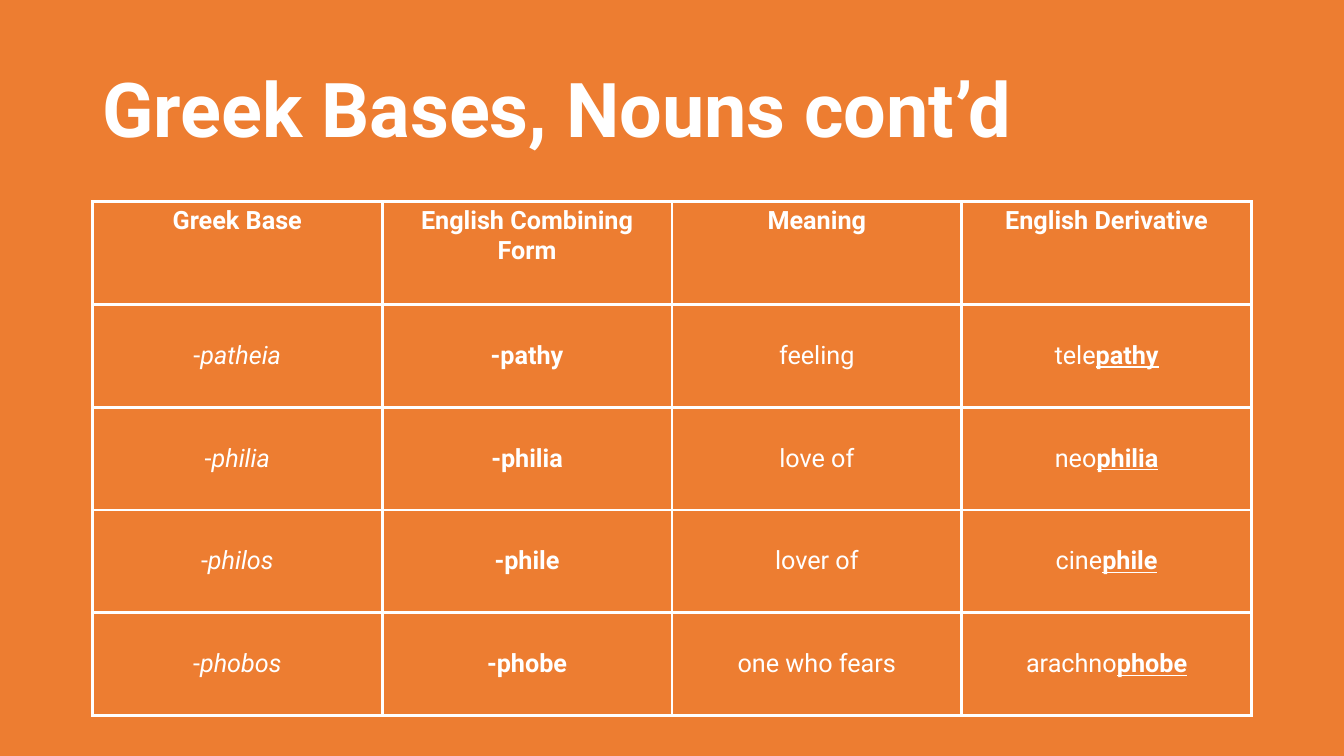
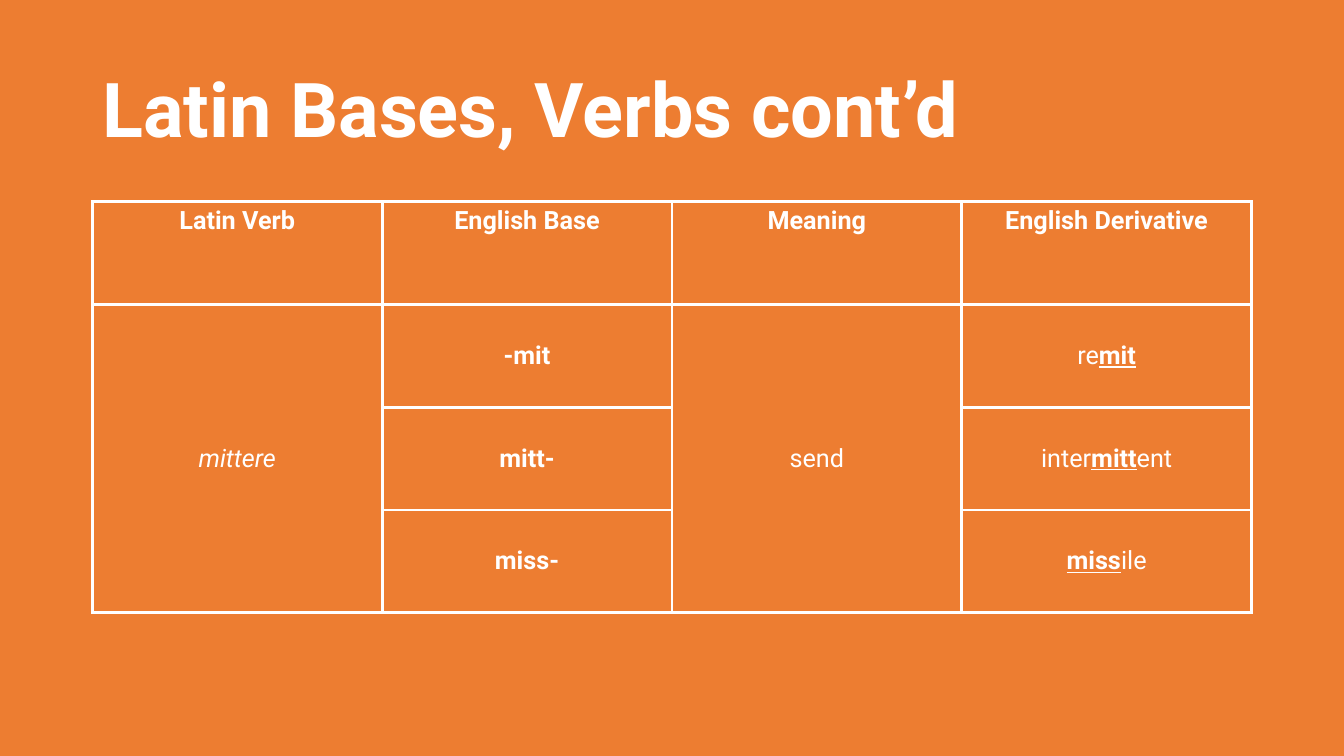
import pptx
import pptx.dml.color
import pptx.enum.text
import pptx.oxml
import pptx.oxml.ns
import pptx.util

Pt = pptx.util.Pt
ANCHOR = pptx.enum.text.MSO_ANCHOR
ALIGN = pptx.enum.text.PP_ALIGN

COLORS = {"background": "ED7D31", "text": "FFFFFF", "border": "FFFFFF"}


class Deck:
    font = "Roboto"
    title_size = 54
    cell_size = 18
    border_width = 2.25
    left = 66
    width = 828
    title_top = 28.8
    title_height = 104.4
    table_top = 144
    row_height = 73.44

    def __init__(self):
        self.prs = pptx.Presentation()
        self.prs.slide_width = Pt(960)
        self.prs.slide_height = Pt(540)
        self.s = None

    def color(self, name):
        return pptx.dml.color.RGBColor.from_string(COLORS[name])

    def slide(self):
        self.s = self.prs.slides.add_slide(self.prs.slide_layouts[6])
        fill = self.s.background.fill
        fill.solid()
        fill.fore_color.rgb = self.color("background")

    def run(self, p, text, size, style=""):
        r = p.add_run()
        r.text = text
        r.font.name = self.font
        r.font.size = Pt(size)
        r.font.color.rgb = self.color("text")
        r.font.bold = "b" in style
        r.font.italic = "i" in style
        r.font.underline = "u" in style

    def title(self, text):
        sp = self.s.shapes.add_textbox(
            Pt(self.left), Pt(self.title_top), Pt(self.width), Pt(self.title_height))
        tf = sp.text_frame
        tf.word_wrap = True
        tf.vertical_anchor = ANCHOR.MIDDLE
        p = tf.paragraphs[0]
        p.line_spacing = 0.9
        self.run(p, text, self.title_size, "b")

    def borders(self, cell):
        tc_pr = cell._tc.get_or_add_tcPr()
        for i, side in enumerate(("lnL", "lnR", "lnT", "lnB")):
            tc_pr.insert(i, pptx.oxml.parse_xml(
                f'<a:{side} {pptx.oxml.ns.nsdecls("a")} w="{Pt(self.border_width)}">'
                f'<a:solidFill><a:srgbClr val="{COLORS["border"]}"/></a:solidFill>'
                f'</a:{side}>'))

    def cell(self, cell, runs, anchor):
        cell.fill.background()
        self.borders(cell)
        cell.vertical_anchor = anchor
        p = cell.text_frame.paragraphs[0]
        p.alignment = ALIGN.CENTER
        for text, style in runs or []:
            self.run(p, text, self.cell_size, style)

    def table(self, headers, body):
        rows = [[[(h, "b")] for h in headers]] + body
        table = self.s.shapes.add_table(
            len(rows), len(headers), Pt(self.left), Pt(self.table_top),
            Pt(self.width), Pt(self.row_height * len(rows))).table
        table.first_row = False
        table.horz_banding = False
        for col in table.columns:
            col.width = Pt(self.width / len(headers))
        for y, row in enumerate(rows):
            table.rows[y].height = Pt(self.row_height)
            for x, runs in enumerate(row):
                self.cell(table.cell(y, x), runs, ANCHOR.MIDDLE if y else ANCHOR.TOP)
        self.merge_down(table, rows)

    def merge_down(self, table, rows):
        for x in range(len(rows[0])):
            for y, row in enumerate(rows):
                end = y
                while end + 1 < len(rows) and rows[end + 1][x] is None:
                    end += 1
                if row[x] is not None and end > y:
                    table.cell(y, x).merge(table.cell(end, x))


def noun_row(base, form, meaning, prefix):
    return [[("-", ""), (base, "i")], [("-" + form, "b")], [(meaning, "")],
            [(prefix, ""), (form, "bu")]]


def main():
    deck = Deck()

    deck.slide()
    deck.title("Greek Bases, Nouns cont’d")
    deck.table(
        ["Greek Base", "English Combining Form", "Meaning", "English Derivative"],
        [noun_row("patheia", "pathy", "feeling", "tele"),
         noun_row("philia", "philia", "love of", "neo"),
         noun_row("philos", "phile", "lover of", "cine"),
         noun_row("phobos", "phobe", "one who fears", "arachno")])

    deck.slide()
    deck.title("Latin Bases, Verbs cont’d")
    deck.table(
        ["Latin Verb", "English Base", "Meaning", "English Derivative"],
        [[[("mittere", "i")], [("-mit", "b")], [("send", "")],
          [("re", ""), ("mit", "bu")]],
         [None, [("mitt-", "b")], None,
          [("inter", ""), ("mitt", "bu"), ("ent", "")]],
         [None, [("miss-", "b")], None,
          [("miss", "bu"), ("ile", "")]]])

    deck.prs.save("out.pptx")


if __name__ == "__main__":
    main()
